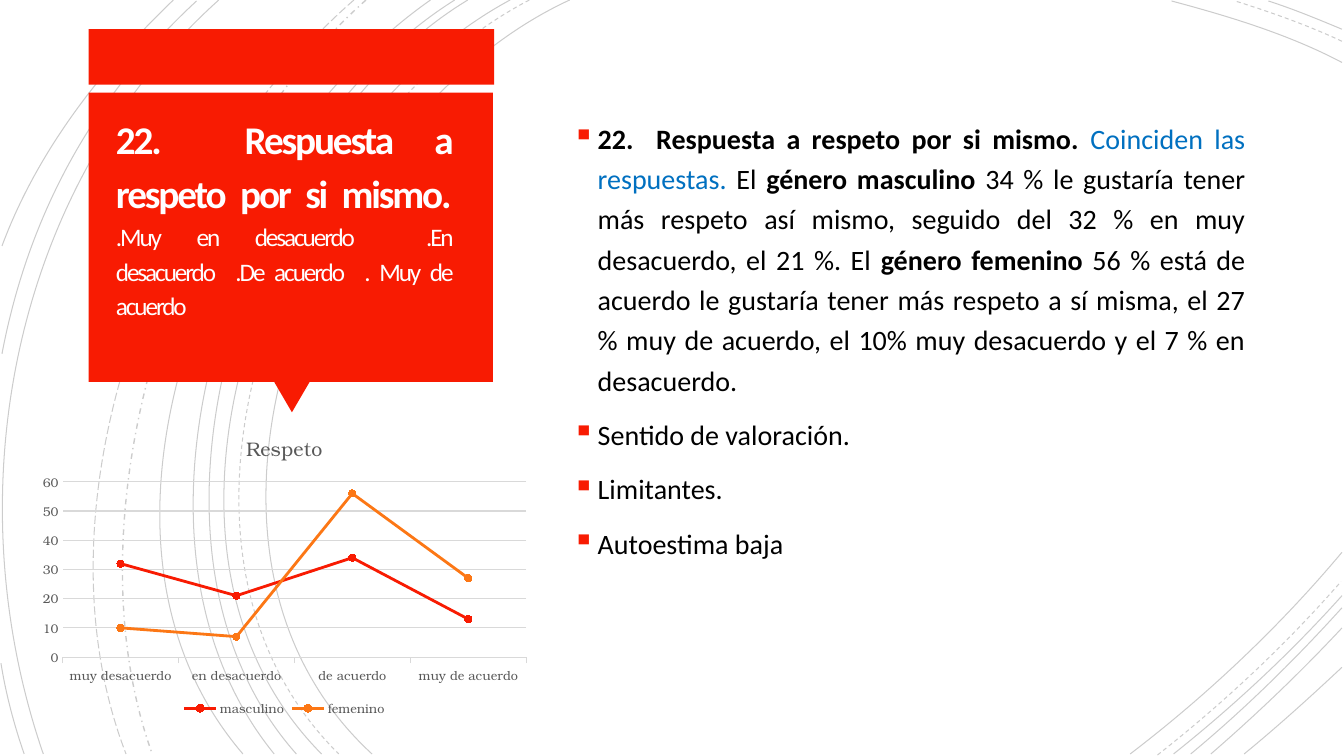
from lxml import etree
from pptx import Presentation
from pptx import util as u
from pptx.chart import data as cd
from pptx.dml.color import RGBColor
from pptx.enum import chart as ch, dml, shapes, text
from pptx.oxml import parse_xml
from pptx.oxml.ns import nsdecls, qn

COLORS = {"red": "F81B02", "orange": "FC7715", "black": "000000", "blue": "0070C0",
          "white": "FFFEFF", "gray": "595959", "grid": "D9D9D9"}
SOLID, DASH = dml.MSO_LINE.SOLID, dml.MSO_LINE.DASH
DASH_DOT, LONG_DASH = dml.MSO_LINE.DASH_DOT, dml.MSO_LINE.LONG_DASH


def rgb(name):
    return RGBColor.from_string(COLORS[name])


def set_font(font, size, color, name="Calibri"):
    font.size = u.Pt(size)
    font.name = name
    font.color.rgb = rgb(color)


deck = Presentation()
deck.slide_width, deck.slide_height = u.Inches(13.33), u.Inches(7.5)
slide = deck.slides.add_slide(deck.slide_layouts[6])

arcs = [
    (SOLID, 5.65, 0, 3.15, 1.15, 1.43, 5.4, 3.69, 7.48),
    (SOLID, 13.31, 0.62, 12.78, 0.34, 12.18, 0.16, 11.62, 0.01),
    (SOLID, 11.21, 7.48, 11.97, 6.9, 12.69, 6.22, 13.31, 5.48),
    (DASH, 5.25, 0, 2.85, 1.25, 1.23, 5.37, 3.36, 7.48),
    (DASH, 13.31, 0.41, 12.97, 0.25, 12.6, 0.12, 12.25, 0.01),
    (DASH, 11.48, 7.49, 12.13, 6.98, 12.75, 6.4, 13.3, 5.77),
    (SOLID, 5.06, 0, 2.7, 1.27, 1.1, 5.37, 3.19, 7.48),
    (SOLID, 13.31, 0.29, 13.07, 0.19, 12.83, 0.09, 12.58, 0.01),
    (SOLID, 11.64, 7.48, 12.23, 7.01, 12.8, 6.48, 13.31, 5.91),
    (SOLID, 4.64, 0, 2.44, 1.33, 1.1, 5.41, 2.94, 7.48),
    (SOLID, 11.81, 7.48, 12.34, 7.04, 12.84, 6.55, 13.31, 6.03),
    (SOLID, 4.51, 0, 2.31, 1.38, 0.97, 5.33, 2.72, 7.48),
    (SOLID, 12.01, 7.48, 12.46, 7.09, 12.9, 6.67, 13.31, 6.23),
    (SOLID, 4.27, 0, 2.17, 1.47, 0.53, 5.29, 2.41, 7.48),
    (SOLID, 12.34, 7.48, 12.67, 7.21, 12.99, 6.92, 13.31, 6.62),
    (DASH_DOT, 3.63, 0, 1.76, 1.66, 0.65, 5.09, 1.51, 7.48),
    (LONG_DASH, 3.51, 0, 1.57, 1.69, 0.29, 4.99, 1.25, 7.48),
    (SOLID, 2.17, 0, 0.11, 1.85, -0.46, 4.9, 0.43, 7.48),
    (SOLID, 1.95, 0.01, 0.92, 0.96, 0.28, 2.14, 0.02, 3.51),
    (SOLID, 0.01, 6.58, 0.06, 6.89, 0.14, 7.19, 0.24, 7.48),
    (SOLID, 1.72, 0, 1, 0.69, 0.37, 1.5, 0.02, 2.44),
]
for dash, *coords in arcs:
    points = [(u.Inches(x), u.Inches(y)) for x, y in zip(coords[::2], coords[1::2])]
    outline = slide.shapes.build_freeform(*points[0])
    outline.add_line_segments(points[1:], close=False)
    arc = outline.convert_to_shape()
    arc.shadow.inherit = False
    arc.fill.background()
    arc.line.color.rgb = rgb("black")
    arc.line.width = u.Pt(1 if dash == DASH_DOT else 0.75)
    arc.line.dash_style = dash
    ink = next(arc.line._ln.iter(qn("a:srgbClr")))
    etree.SubElement(ink, qn("a:alpha")).set("val", "20000")
    track = next(arc._element.iter(qn("a:path")))
    curve = etree.SubElement(track, qn("a:cubicBezTo"))
    for segment in track.findall(qn("a:lnTo")):
        curve.append(segment[0])
        track.remove(segment)

RECT, TRIANGLE = shapes.MSO_SHAPE.RECTANGLE, shapes.MSO_SHAPE.ISOSCELES_TRIANGLE
for kind, box, turn in [(RECT, (0.88, 0.29, 4.02, 0.55), 0),
                        (TRIANGLE, (2.72, 3.79, 0.35, 0.3), 180),
                        (RECT, (0.88, 0.92, 4.01, 2.87), 0)]:
    panel = slide.shapes.add_shape(kind, *map(u.Inches, box))
    panel.rotation = turn
    panel.shadow.inherit = False
    panel.fill.solid()
    panel.fill.fore_color.rgb = rgb("red")
    panel.line.fill.background()

question = slide.shapes.add_textbox(*map(u.Inches, (0.9, 0.93, 3.83, 2.4))).text_frame
question.word_wrap = True
question.vertical_anchor = text.MSO_ANCHOR.MIDDLE
question.margin_left = question.margin_right = u.Inches(0.25)
question.margin_top = question.margin_bottom = u.Inches(0.25)
heading = question.paragraphs[0]
heading.alignment = text.PP_ALIGN.JUSTIFY
heading.line_spacing = 1.15
for wording, size, bold in [
    ("22.  Respuesta a respeto por si mismo.", 28, True),
    (".Muy en desacuerdo  .En desacuerdo  .De acuerdo  . Muy de acuerdo", 18, False),
]:
    if heading.runs:
        heading.add_line_break()
    part = heading.add_run()
    part.text = wording
    set_font(part.font, size, "white")
    part.font.bold = bold
    part._r.get_or_add_rPr().set("spc", "-150")

findings = [
    [("22.  Respuesta a respeto por si mismo. ", "black", True),
     ("Coinciden las respuestas.", "blue", False),
     (" El ", "black", False),
     ("género masculino", "black", True),
     (" 34 % le gustaría tener más respeto así mismo, seguido del 32 % en muy "
      "desacuerdo, el 21 %. El ", "black", False),
     ("género femenino", "black", True),
     (" 56 % está de acuerdo le gustaría tener más respeto a sí misma, el 27 % muy de "
      "acuerdo, el 10% muy desacuerdo y el 7 % en desacuerdo.", "black", False)],
    [("Sentido de valoración.", "black", False)],
    [("Limitantes.", "black", False)],
    [("Autoestima baja", "black", False)],
]
analysis = slide.shapes.add_textbox(*map(u.Inches, (5.58, 0.31, 6.87, 6.07))).text_frame
analysis.word_wrap = True
analysis.vertical_anchor = text.MSO_ANCHOR.MIDDLE
for number, finding in enumerate(findings):
    item = analysis.add_paragraph() if number else analysis.paragraphs[0]
    item.alignment = text.PP_ALIGN.JUSTIFY
    item.line_spacing = 1.2
    item.space_before = u.Pt(10)
    set_font(item.font, 20, "black")
    props = item._p.get_or_add_pPr()
    props.set("marL", str(u.Inches(0.25)))
    props.set("indent", str(-u.Inches(0.25)))
    bullet = [f'<a:buClr {nsdecls("a")}><a:srgbClr val="{COLORS["red"]}"/></a:buClr>',
              f'<a:buSzPct {nsdecls("a")} val="110000"/>',
              f'<a:buChar {nsdecls("a")} char="▪"/>']
    for tag in bullet:
        props.find(qn("a:defRPr")).addprevious(parse_xml(tag))
    for wording, color, bold in finding:
        part = item.add_run()
        part.text = wording
        set_font(part.font, 20, color)
        part.font.bold = bold

scores = cd.CategoryChartData()
scores.categories = ["muy desacuerdo", "en desacuerdo", "de acuerdo", "muy de acuerdo"]
scores.add_series("masculino", (32, 21, 34, 13))
scores.add_series("femenino", (10, 7, 56, 27))
respect = slide.shapes.add_chart(ch.XL_CHART_TYPE.LINE_MARKERS,
                                 *map(u.Inches, (0.32, 4.15, 5, 3)), scores).chart
SERIF = "TeX Gyre Bonum"
set_font(respect.font, 10, "black", SERIF)
respect.has_title = True
respect.chart_title.text_frame.text = "Respeto"
title_font = respect.chart_title.text_frame.paragraphs[0].font
set_font(title_font, 14, "gray", SERIF)
title_font.bold = False
respect.has_legend = True
respect.legend.position = ch.XL_LEGEND_POSITION.BOTTOM
respect.legend.include_in_layout = False
set_font(respect.legend.font, 9, "gray", SERIF)

answers, percent = respect.category_axis, respect.value_axis
for axis in (answers, percent):
    set_font(axis.tick_labels.font, 9, "gray", SERIF)
answers.major_tick_mark = ch.XL_TICK_MARK.OUTSIDE
percent.major_tick_mark = ch.XL_TICK_MARK.NONE
percent.minimum_scale, percent.maximum_scale, percent.major_unit = 0, 60, 10
percent.format.line.fill.background()
for rule in (answers.format.line, percent.major_gridlines.format.line):
    rule.color.rgb = rgb("grid")
    rule.width = u.Pt(0.75)

respect.plots[0].vary_by_categories = False
for gender, color in zip(respect.plots[0].series, ("red", "orange")):
    gender.smooth = False
    gender.format.line.color.rgb = rgb(color)
    gender.format.line.width = u.Pt(2)
    gender.marker.style = ch.XL_MARKER_STYLE.CIRCLE
    gender.marker.size = 5
    gender.marker.format.fill.solid()
    gender.marker.format.fill.fore_color.rgb = rgb(color)
    gender.marker.format.line.color.rgb = rgb(color)

plot_area = next(respect._chartSpace.iter(qn("c:plotArea")))
for old in plot_area.findall(qn("c:layout")):
    plot_area.remove(old)
place = "".join(f'<c:{key} val="{val}"/>' for key, val in [
    ("layoutTarget", "inner"), ("xMode", "edge"), ("yMode", "edge"),
    ("x", 0.06), ("y", 0.21), ("w", 0.92), ("h", 0.58)])
plot_area.insert(0, parse_xml(
    f'<c:layout {nsdecls("c")}><c:manualLayout>{place}</c:manualLayout></c:layout>'))

deck.save("out.pptx")
